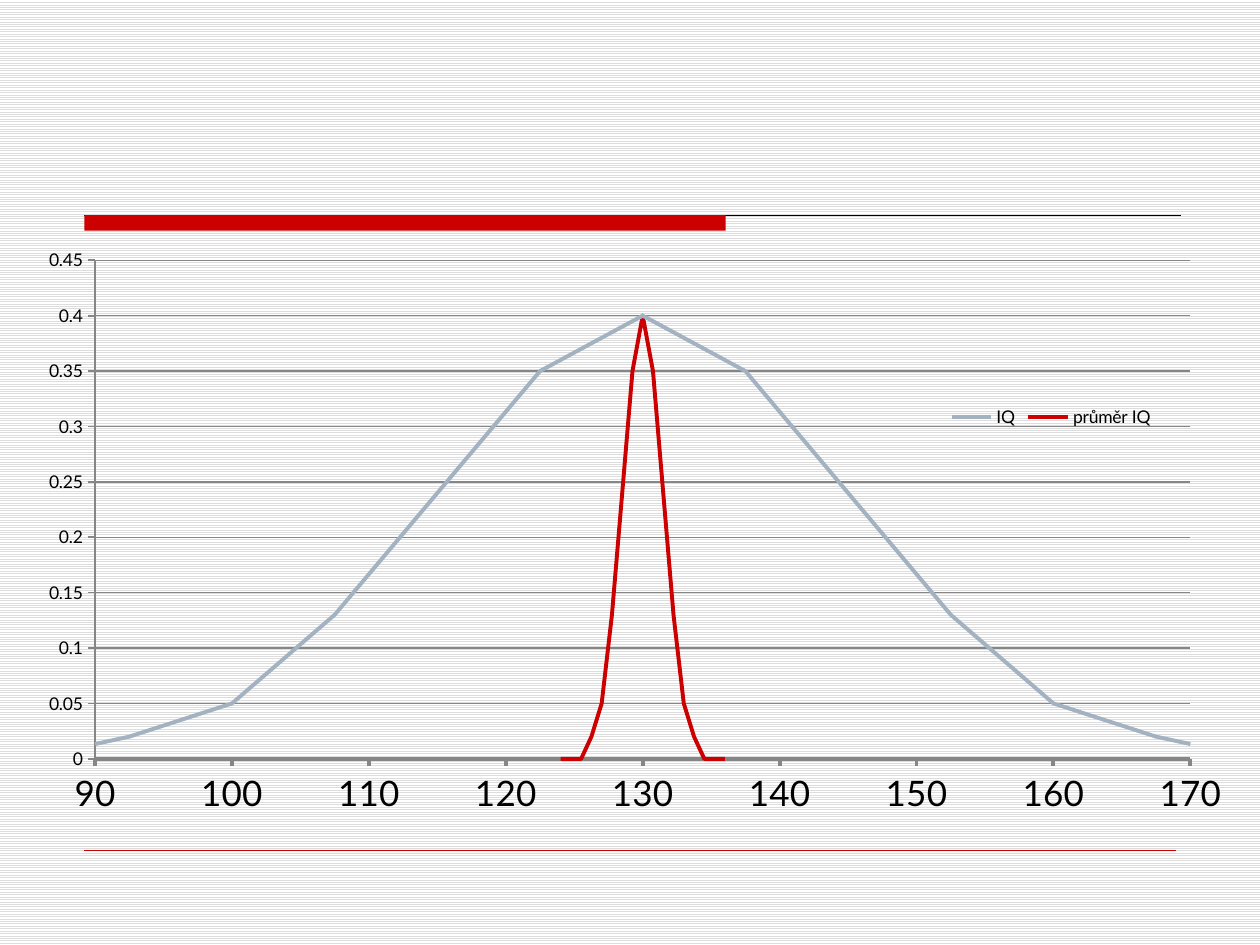
from math import exp, pi, sqrt

from lxml.etree import SubElement
from pptx import Presentation
from pptx.chart.data import XyChartData as XyData
from pptx.dml.color import RGBColor as Rgb
from pptx.enum.chart import XL_CHART_TYPE as Kind, XL_LEGEND_POSITION as Side, XL_TICK_MARK as Tick
from pptx.enum.dml import MSO_PATTERN as Pat
from pptx.enum.shapes import MSO_CONNECTOR as Link, MSO_SHAPE as Form
from pptx.oxml import parse_xml
from pptx.oxml.ns import nsdecls, qn
from pptx.util import Cm, Pt

HUES = {"red": "CC0000", "blue": "A3B2C1", "grid": "868686",
        "text": "000000", "stripe": "DDDDDD", "paper": "FFFFFF"}
FONT = "Lato"
MEAN = 130
CURVES = [("IQ", 15, "blue"), ("průměr IQ", 1.5, "red")]


def hue(name):
    return Rgb.from_string(HUES[name])


def stroke(line, name, width):
    line.color.rgb = hue(name)
    line.width = Pt(width)


def paint(slide):
    fill = slide.background.fill
    fill.patterned()
    fill.pattern = Pat.LIGHT_HORIZONTAL
    fill.fore_color.rgb = hue("stripe")
    fill.back_color.rgb = hue("paper")


def add_bar(slide, left, top, width, height):
    bar = slide.shapes.add_shape(Form.RECTANGLE, Cm(left), Cm(top), Cm(width), Cm(height))
    bar.shadow.inherit = False
    bar.fill.solid()
    bar.fill.fore_color.rgb = hue("red")
    bar.line.fill.background()


def add_rule(slide, left, right, top, name, width):
    rule = slide.shapes.add_connector(Link.STRAIGHT, Cm(left), Cm(top), Cm(right), Cm(top))
    stroke(rule.line, name, width)
    SubElement(rule._element.spPr, qn("a:effectLst"))


def layout(left, top, width, height, inner=False):
    target = '<c:layoutTarget val="inner"/>' if inner else ""
    return parse_xml(
        f'<c:layout {nsdecls("c")}><c:manualLayout>{target}'
        '<c:xMode val="edge"/><c:yMode val="edge"/>'
        f'<c:x val="{left}"/><c:y val="{top}"/><c:w val="{width}"/><c:h val="{height}"/>'
        '</c:manualLayout></c:layout>')


def no_fill():
    return parse_xml(f'<c:spPr {nsdecls("c", "a")}><a:noFill/><a:ln><a:noFill/></a:ln></c:spPr>')


def bell():
    data = XyData()
    for name, spread, _ in CURVES:
        row = data.add_series(name)
        for step in range(-8, 9):
            z = step / 2
            row.add_data_point(MEAN + spread * z, round(exp(-z * z / 2) / sqrt(2 * pi), 2))
    return data


def set_axis(axis, low, high, unit, size, width):
    axis.minimum_scale, axis.maximum_scale = low, high
    axis.major_unit = unit
    axis.major_tick_mark = Tick.OUTSIDE
    axis.minor_tick_mark = Tick.NONE
    axis.tick_labels.font.size = Pt(size)
    stroke(axis.format.line, "grid", width)


def add_plot(slide):
    frame = slide.shapes.add_chart(Kind.XY_SCATTER_SMOOTH_NO_MARKERS,
                                   Cm(0.79), Cm(4.95), Cm(24), Cm(11.91), bell())
    chart = frame.chart
    chart.has_title = False
    chart.font.name = FONT
    chart.font.size = Pt(10)
    chart.font.color.rgb = hue("text")
    for row, (_, _, name) in zip(chart.plots[0].series, CURVES):
        row.smooth = True
        stroke(row.format.line, name, 2.25)

    set_axis(chart.category_axis, 90, 170, 10, 20, 2.25)
    set_axis(chart.value_axis, 0, 0.45, 0.05, 10, 1)
    chart.category_axis.has_major_gridlines = False
    chart.value_axis.has_major_gridlines = True
    stroke(chart.value_axis.major_gridlines.format.line, "grid", 0.75)
    chart.value_axis.tick_labels.number_format = "General"
    chart.value_axis.tick_labels.number_format_is_linked = False

    chart.has_legend = True
    legend = chart.legend
    legend.position = Side.RIGHT
    legend.include_in_layout = False
    box = legend._element
    for old in box.findall(qn("c:layout")):
        box.remove(old)
    box.find(qn("c:legendPos")).addnext(layout(0.76, 0.26, 0.18, 0.06))

    root = chart._chartSpace
    area = root.chart.plotArea
    for old in area.findall(qn("c:layout")):
        area.remove(old)
    area.insert(0, layout(0.047, 0.025, 0.92, 0.844, True))
    area.append(no_fill())
    root.find(qn("c:txPr")).addprevious(no_fill())


def main():
    deck = Presentation()
    deck.slide_width, deck.slide_height = Cm(25.4), Cm(19.05)
    slide = deck.slides.add_slide(deck.slide_layouts[6])
    paint(slide)
    add_rule(slide, 1.7, 23.8, 4.34, "text", 0.75)
    add_bar(slide, 1.7, 4.34, 12.93, 0.31)
    add_rule(slide, 1.7, 23.7, 17.15, "red", 0.25)
    add_plot(slide)
    deck.save("out.pptx")


if __name__ == "__main__":
    main()
